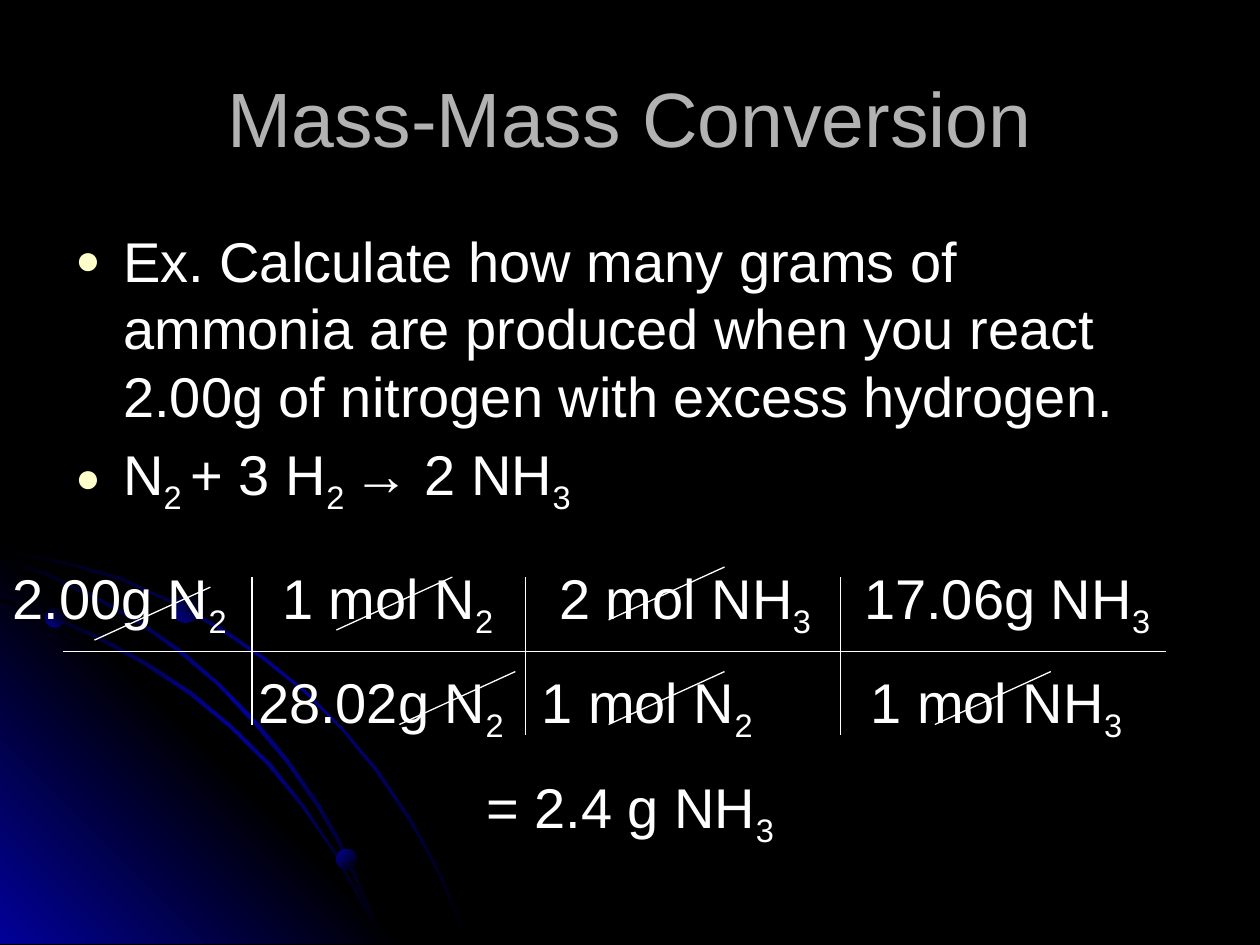
import pptx
import pptx.dml.color
import pptx.enum.shapes
import pptx.enum.text
import pptx.oxml
import pptx.oxml.ns
import pptx.util
from lxml import etree

Inches = pptx.util.Inches
Pt = pptx.util.Pt
qn = pptx.oxml.ns.qn

COLORS = {
    "black": "000000",
    "blue": "010199",
    "title": "B2B2B2",
    "text": "FFFFFF",
    "bullet": "FFFFCC",
}
GLOW = ["black", "blue", "black"]
CORNER = ["blue", "black", "blue"]
BALL = ["blue", "black"]

# Outlines of the orbit bands, in inches
OUTER_ORBIT = [
    (0.57, 4.47), (0.28, 4.41), (0, 4.35), (0, 4.38), (0.28, 4.43), (0.56, 4.49),
    (0.97, 4.61), (1.35, 4.78), (1.73, 4.99), (2.08, 5.23), (2.41, 5.49), (2.71, 5.79),
    (2.98, 6.12), (3.23, 6.49), (3.37, 6.73), (3.5, 6.98), (3.6, 7.23), (3.7, 7.49),
    (3.72, 7.49), (3.62, 7.23), (3.52, 6.98), (3.39, 6.73), (3.25, 6.48), (3, 6.11),
    (2.72, 5.78), (2.42, 5.48), (2.09, 5.21), (1.74, 4.97), (1.36, 4.77), (0.98, 4.59),
]
INNER_ORBIT = [
    (2.85, 7.14), (2.94, 7.32), (3.01, 7.49), (3.03, 7.49), (2.96, 7.3), (2.86, 7.12),
    (2.66, 6.76), (2.42, 6.4), (2.15, 6.06), (1.84, 5.76), (1.52, 5.49), (1.17, 5.26),
    (0.79, 5.05), (0.41, 4.88), (0, 4.75), (0, 4.77), (0.39, 4.9), (0.77, 5.07),
    (1.15, 5.28), (1.5, 5.51), (1.83, 5.78), (2.13, 6.08), (2.4, 6.41), (2.65, 6.77),
]
MIDDLE_ORBIT = [
    (0, 4.42), (0, 4.44), (0.36, 4.57), (0.74, 4.75), (1.09, 4.94), (1.42, 5.18),
    (1.73, 5.44), (2.02, 5.75), (2.27, 6.05), (2.52, 6.41), (2.67, 6.67), (2.8, 6.94),
    (2.92, 7.22), (3.01, 7.49), (3.03, 7.49), (2.94, 7.2), (2.82, 6.93), (2.69, 6.65),
    (2.54, 6.39), (2.29, 6.03), (2.04, 5.73), (1.75, 5.43), (1.44, 5.16), (1.11, 4.93),
    (0.76, 4.73), (0.39, 4.55),
]
CORNER_TRIANGLE = [(3.22, 7.49), (0, 7.49), (0, 4.27)]


def color(name):
    return pptx.dml.color.RGBColor.from_string(COLORS[name])


class SlideBuilder:
    font = "Arial"
    text_size = 32

    def __init__(self, page):
        self.page = page
        self.shapes = page.shapes

    def background(self, name):
        fill = self.page.background.fill
        fill.solid()
        fill.fore_color.rgb = color(name)

    def gradient(self, shape, names, angle):
        shape.shadow.inherit = False
        shape.line.fill.background()
        shape.fill.gradient()
        grad = shape._element.spPr.find(qn("a:gradFill"))
        stops = grad.find(qn("a:gsLst"))
        for stop in list(stops):
            stops.remove(stop)
        for index, name in enumerate(names):
            stop = etree.SubElement(stops, qn("a:gs"), pos=str(100000 * index // (len(names) - 1)))
            etree.SubElement(stop, qn("a:srgbClr"), val=COLORS[name])
        line = grad.find(qn("a:lin"))
        line.set("ang", str(angle * 60000))
        line.set("scaled", "0")

    def outline(self, points, names, angle):
        corners = [(Inches(x), Inches(y)) for x, y in points]
        builder = self.shapes.build_freeform(*corners[0])
        builder.add_line_segments(corners[1:], close=True)
        self.gradient(builder.convert_to_shape(), names, angle)

    def ball(self, left, top, size, angle):
        oval = pptx.enum.shapes.MSO_SHAPE.OVAL
        shape = self.shapes.add_shape(oval, Inches(left), Inches(top), Inches(size), Inches(size))
        self.gradient(shape, BALL, angle)

    def line(self, x1, y1, x2, y2):
        straight = pptx.enum.shapes.MSO_CONNECTOR.STRAIGHT
        line = self.shapes.add_connector(straight, Inches(x1), Inches(y1), Inches(x2), Inches(y2))
        line.line.color.rgb = color("text")
        line.line.width = Pt(0.75)
        etree.SubElement(line._element.spPr, qn("a:effectLst"))

    def span(self, para, text, size, name, subscript=False):
        span = para.add_run()
        span.text = text
        span.font.name = self.font
        span.font.size = Pt(size)
        span.font.color.rgb = color(name)
        if subscript:
            span._r.get_or_add_rPr().set("baseline", "-25000")

    def title(self, text, left, top, width, height):
        box = self.shapes.title
        box.left, box.top = Inches(left), Inches(top)
        box.width, box.height = Inches(width), Inches(height)
        box.text_frame.vertical_anchor = pptx.enum.text.MSO_ANCHOR.MIDDLE
        para = box.text_frame.paragraphs[0]
        para.alignment = pptx.enum.text.PP_ALIGN.CENTER
        self.span(para, text, 44, "title")

    def text(self, paragraphs, left, top, width, height, before,
             bullets=False, tabs=None, centered=False):
        """Each paragraph is a list of parts that are normal and subscript in turn."""
        box = self.shapes.add_textbox(Inches(left), Inches(top), Inches(width), Inches(height))
        frame = box.text_frame
        frame.word_wrap = True
        for index, parts in enumerate(paragraphs):
            para = frame.add_paragraph() if index else frame.paragraphs[0]
            if centered:
                para.alignment = pptx.enum.text.PP_ALIGN.CENTER
            props = para._p.get_or_add_pPr()
            spacing = etree.SubElement(props, qn("a:spcBef"))
            etree.SubElement(spacing, qn("a:spcPct"), val=str(before * 1000))
            if bullets:
                self.bullet(props)
            if tabs:
                stops = etree.SubElement(props, qn("a:tabLst"))
                for stop in tabs[index]:
                    etree.SubElement(stops, qn("a:tab"), pos=str(Inches(stop)), algn="l")
            for number, part in enumerate(parts):
                self.span(para, part, self.text_size, "text", subscript=number % 2 == 1)

    def bullet(self, props):
        props.set("marL", str(Inches(0.38)))
        props.set("indent", str(-Inches(0.38)))
        tint = etree.SubElement(props, qn("a:buClr"))
        etree.SubElement(tint, qn("a:srgbClr"), val=COLORS["bullet"])
        etree.SubElement(props, qn("a:buSzPct"), val="75000")
        etree.SubElement(props, qn("a:buFont"), typeface=self.font)
        etree.SubElement(props, qn("a:buChar"), char="●")


def main():
    deck = pptx.Presentation()
    deck.slide_width, deck.slide_height = Inches(10), Inches(7.5)
    slide = SlideBuilder(deck.slides.add_slide(deck.slide_layouts[5]))

    # Backdrop: glowing corner, orbits and balls
    slide.background("black")
    slide.outline(OUTER_ORBIT, GLOW, 45)
    slide.outline(CORNER_TRIANGLE, CORNER, 315)
    for orbit in (INNER_ORBIT, MIDDLE_ORBIT):
        slide.outline(orbit, GLOW, 45)
    for ball in [(0.36, 4.83, 0.15, 315), (2.67, 6.74, 0.16, 45), (1.37, 4.73, 0.21, 315)]:
        slide.ball(*ball)

    # Title and problem
    slide.title("Mass-Mass Conversion", 0.5, 0.3, 9, 1.25)
    problem = [
        ["Ex. Calculate how many grams of ammonia are produced when you react "
         "2.00g of nitrogen with excess hydrogen."],
        ["N", "2 ", "+ 3 H", "2 ", "→ 2 NH", "3"],
    ]
    slide.text(problem, 0.5, 1.75, 9, 4.95, before=20, bullets=True)

    # Conversion factors, aligned by tab stops
    factors = [
        ["2.00g N", "2", "\t1 mol N", "2", "\t2 mol NH", "3", "\t17.06g NH", "3"],
        ["\t28.02g N", "2", "\t1 mol N", "2", "\t1 mol NH", "3"],
    ]
    slide.text(factors, 0, 4.42, 9.83, 1.43, before=50,
               tabs=[(2.14, 4.34, 6.76), (1.95, 4.2, 6.81)])

    # Grid between the factors
    slide.line(0.5, 5.17, 9.25, 5.17)
    for x, bottom in [(2, 5.75), (4.17, 5.83), (6.67, 5.83)]:
        slide.line(x, 4.58, x, bottom)

    # Strokes through the cancelled units
    for x, y in [(0.75, 5.08), (3.17, 5.75), (2.67, 5), (4.83, 5.75), (4.83, 4.92), (7.42, 5.75)]:
        slide.line(x, y, x + 0.92, y - 0.42)

    # Answer
    slide.text([["= 2.4 g NH", "3"]], 2.5, 6.08, 5, 0.63, before=50, centered=True)

    deck.save("out.pptx")


if __name__ == "__main__":
    main()
